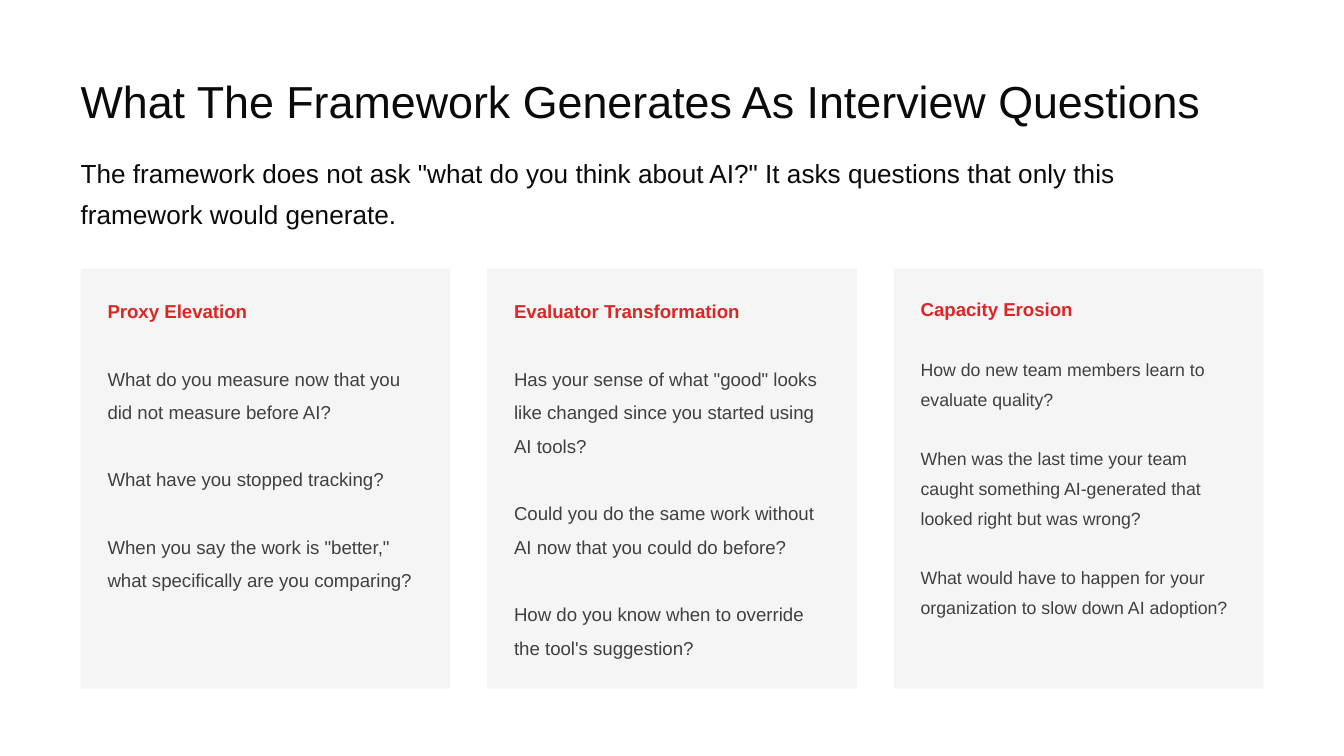
from dataclasses import dataclass

from pptx import Presentation
from pptx.dml.color import RGBColor
from pptx.enum import shapes, text
from pptx.util import Inches, Pt


@dataclass(frozen=True)
class Theme:
    font: str = "Arial"
    ink: str = "0A0A0A"
    accent: str = "DC2626"
    body: str = "404040"
    panel: str = "F5F5F5"
    title_size: float = 24
    lead_size: float = 14
    heading_size: float = 10


@dataclass(frozen=True)
class Card:
    heading: str
    questions: tuple
    size: float = 10
    line_spacing: float = 1.5
    gap: float = 18


THEME = Theme()

# Layout in inches, on a 16:9 slide
SLIDE_WIDTH = 10
SLIDE_HEIGHT = SLIDE_WIDTH * 9 / 16
MARGIN = 0.6
CONTENT_WIDTH = SLIDE_WIDTH - 2 * MARGIN
CARD_TOP, CARD_WIDTH = 2, 2.75
CARD_HEIGHT = SLIDE_HEIGHT - CARD_TOP - 0.5
PADDING_X, PADDING_TOP, PADDING_BOTTOM = 0.2, 0.15, 0.25

CARDS = (
    Card("Proxy Elevation", (
        "What do you measure now that you did not measure before AI?",
        "What have you stopped tracking?",
        'When you say the work is "better," what specifically are you comparing?',
    )),
    Card("Evaluator Transformation", (
        'Has your sense of what "good" looks like changed since you started using AI tools?',
        "Could you do the same work without AI now that you could do before?",
        "How do you know when to override the tool's suggestion?",
    )),
    Card("Capacity Erosion", (
        "How do new team members learn to evaluate quality?",
        "When was the last time your team caught something AI-generated that looked right but was wrong?",
        "What would have to happen for your organization to slow down AI adoption?",
    ), size=9.5, line_spacing=1.4, gap=16),
)


def add_text_frame(slide, left, top, width, height, anchor=text.MSO_ANCHOR.TOP):
    box = slide.shapes.add_textbox(Inches(left), Inches(top), Inches(width), Inches(height))
    frame = box.text_frame
    frame.word_wrap = True
    frame.vertical_anchor = anchor
    frame.margin_left = frame.margin_right = frame.margin_top = frame.margin_bottom = 0
    return frame


def write(paragraph, words, size, color, bold=False, line_spacing=None):
    if line_spacing:
        paragraph.line_spacing = line_spacing
    run = paragraph.add_run()
    run.text = words
    run.font.name = THEME.font
    run.font.size = Pt(size)
    run.font.bold = bold
    run.font.color.rgb = RGBColor.from_string(color)


def add_panel(slide, left):
    panel = slide.shapes.add_shape(
        shapes.MSO_SHAPE.RECTANGLE,
        Inches(left), Inches(CARD_TOP), Inches(CARD_WIDTH), Inches(CARD_HEIGHT))
    panel.shadow.inherit = False
    panel.fill.solid()
    panel.fill.fore_color.rgb = RGBColor.from_string(THEME.panel)
    panel.line.fill.background()


def add_card(slide, left, card):
    add_panel(slide, left)
    frame = add_text_frame(slide, left + PADDING_X, CARD_TOP + PADDING_TOP,
                           CARD_WIDTH - 2 * PADDING_X,
                           CARD_HEIGHT - PADDING_TOP - PADDING_BOTTOM)
    write(frame.paragraphs[0], card.heading, THEME.heading_size, THEME.accent,
          bold=True, line_spacing=card.line_spacing)
    for question in card.questions:
        paragraph = frame.add_paragraph()
        paragraph.space_before = Pt(card.gap)
        write(paragraph, question, card.size, THEME.body, line_spacing=card.line_spacing)


def main():
    presentation = Presentation()
    presentation.slide_width = Inches(SLIDE_WIDTH)
    presentation.slide_height = Inches(SLIDE_HEIGHT)
    slide = presentation.slides.add_slide(presentation.slide_layouts[6])

    # Title and lead sentence
    title = add_text_frame(slide, MARGIN, 0.5, CONTENT_WIDTH, 0.5, text.MSO_ANCHOR.MIDDLE)
    write(title.paragraphs[0], "What The Framework Generates As Interview Questions",
          THEME.title_size, THEME.ink)
    lead = add_text_frame(slide, MARGIN, 1.1, 8, 0.4)
    write(lead.paragraphs[0],
          'The framework does not ask "what do you think about AI?" '
          "It asks questions that only this framework would generate.",
          THEME.lead_size, THEME.ink, line_spacing=1.3)

    # Question cards, spread evenly over the content width
    step = (CONTENT_WIDTH - CARD_WIDTH) / (len(CARDS) - 1)
    for index, card in enumerate(CARDS):
        add_card(slide, MARGIN + index * step, card)

    presentation.save("out.pptx")


if __name__ == "__main__":
    main()
